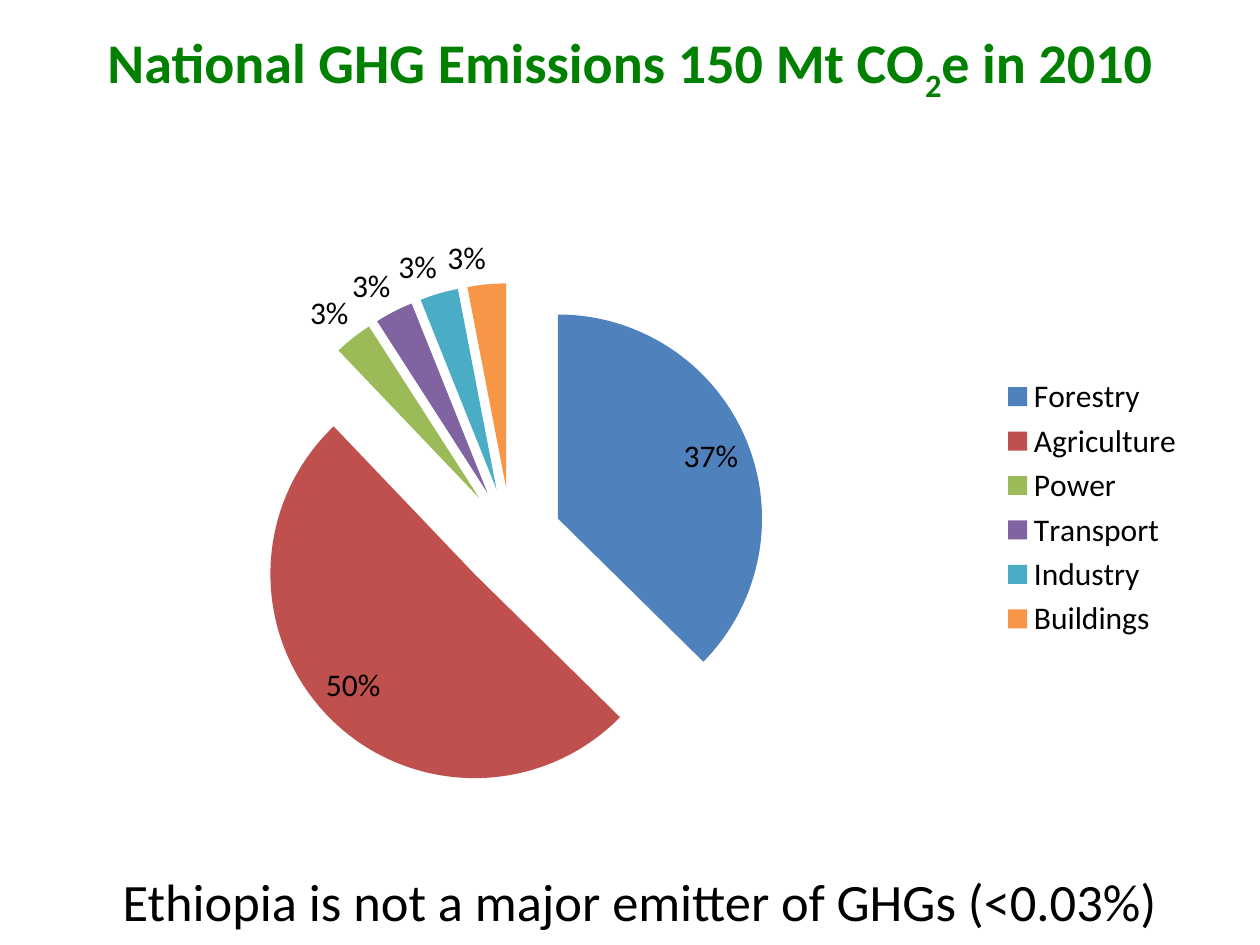
from lxml import etree
from pptx import Presentation
from pptx.chart.data import CategoryChartData
from pptx.dml.color import RGBColor
from pptx.enum import chart as ch, text as tx
from pptx.oxml import parse_xml
from pptx.oxml.ns import nsdecls, qn
from pptx.util import Inches, Pt

FONT = "Calibri"
GREEN = RGBColor(0x00, 0x80, 0x00)
BLACK = RGBColor(0x00, 0x00, 0x00)

# Each run is (text, baseline shift in percent)
TITLE = [("National GHG Emissions 150 Mt CO", 0), ("2", -25), ("e in 2010", 0)]
NOTE = [("Ethiopia is not a major emitter of GHGs (<0.03%)", 0)]
SERIES = "Total GHG emissions"
SHARES = [
    ("Forestry", 0.37, RGBColor(0x4F, 0x81, 0xBD)),
    ("Agriculture", 0.5, RGBColor(0xC0, 0x50, 0x4D)),
    ("Power", 0.03, RGBColor(0x9B, 0xBB, 0x59)),
    ("Transport", 0.03, RGBColor(0x80, 0x64, 0xA2)),
    ("Industry", 0.03, RGBColor(0x4B, 0xAC, 0xC6)),
    ("Buildings", 0.03, RGBColor(0xF7, 0x96, 0x46)),
]
PLOT = {"x": 0.17, "y": 0.17, "w": 0.45, "h": 0.75}
EXPLODE = 25


def write(shape, box, runs, size, color, bold=False, anchor=tx.MSO_ANCHOR.MIDDLE):
    shape.left, shape.top, shape.width, shape.height = map(Inches, box)
    frame = shape.text_frame
    frame.word_wrap = True
    frame.auto_size = tx.MSO_AUTO_SIZE.NONE
    frame.vertical_anchor = anchor
    para = frame.paragraphs[0]
    para.alignment = tx.PP_ALIGN.CENTER
    for words, shift in runs:
        run = para.add_run()
        run.text = words
        font = run.font
        font.name, font.size, font.bold = FONT, Pt(size), bold
        font.color.rgb = color
        if shift:
            font._element.set("baseline", str(shift * 1000))


def place(chart):
    """Fix the inner plot area as fractions of the chart."""
    area = chart._chartSpace.chart.plotArea
    for old in area.findall(qn("c:layout")):
        area.remove(old)
    parts = "".join(f'<c:{k}Mode val="edge"/>' for k in "xy")
    parts += "".join(f'<c:{k} val="{v}"/>' for k, v in PLOT.items())
    area.insert(0, parse_xml(
        f'<c:layout {nsdecls("c")}><c:manualLayout>'
        f'<c:layoutTarget val="inner"/>{parts}</c:manualLayout></c:layout>'))


def add_pie(slide, box):
    data = CategoryChartData(number_format="0%")
    data.categories = [name for name, _, _ in SHARES]
    data.add_series(SERIES, [share for _, share, _ in SHARES])
    chart = slide.shapes.add_chart(
        ch.XL_CHART_TYPE.PIE, *map(Inches, box), data).chart
    chart.has_title = False
    chart.font.name, chart.font.size = FONT, Pt(18)
    chart.font.color.rgb = BLACK
    chart.has_legend = True
    chart.legend.position = ch.XL_LEGEND_POSITION.RIGHT
    chart.legend.include_in_layout = False
    place(chart)

    plot = chart.plots[0]
    plot.vary_by_categories = True
    plot.has_data_labels = True
    labels = plot.data_labels
    labels.show_value = True
    labels.number_format, labels.number_format_is_linked = "0%", False
    labels.position = ch.XL_LABEL_POSITION.BEST_FIT

    series = plot.series[0]
    for i, (_, _, color) in enumerate(SHARES):
        fill = series.points[i].format.fill
        fill.solid()
        fill.fore_color.rgb = color
    burst = etree.Element(qn("c:explosion"), val=str(EXPLODE))
    series._element.find(qn("c:dPt")).addprevious(burst)


def main():
    prs = Presentation()
    prs.slide_width, prs.slide_height = Inches(10), Inches(7.5)
    slide = prs.slides.add_slide(prs.slide_layouts[5])
    write(slide.shapes.title, (0, 0.17, 10, 0.64), TITLE, 32, GREEN,
          bold=True, anchor=tx.MSO_ANCHOR.TOP)
    add_pie(slide, (0.5, 1.33, 9, 5.4))
    note = slide.shapes.add_textbox(0, 0, 0, 0)
    write(note, (0.83, 6.95, 8.5, 0.4), NOTE, 30, BLACK)
    prs.save("out.pptx")


if __name__ == "__main__":
    main()
